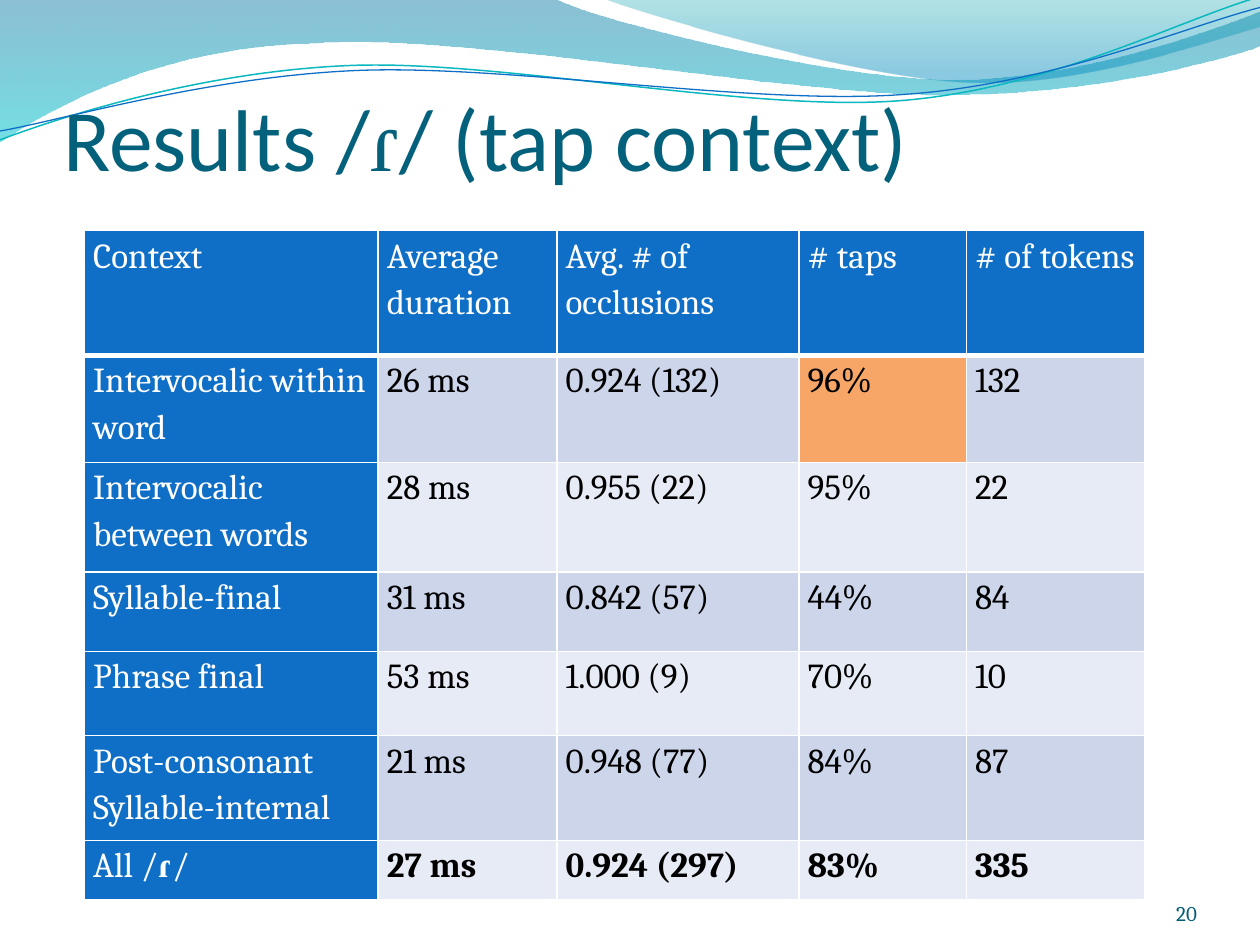
import math
from dataclasses import dataclass

from lxml import etree
from pptx import Presentation, util as u
from pptx.dml.color import RGBColor
from pptx.enum import text
from pptx.oxml.ns import qn

COLORS = {
    "title": "04617B", "number": "045D75", "blue": "0F6FC6", "teal": "0AB8BF",
    "band_dark": "CCD5EA", "band_light": "E7EBF5", "highlight": "F8A668",
    "white": "FFFFFF", "black": "000000",
}
LINE_TILT = -2.7


@dataclass
class Stop:
    position: float
    color: str
    alpha: int


@dataclass
class Wave:
    """Segments from start in inches: (x, y) is straight, six numbers are a Bezier curve."""
    start: tuple
    segments: list
    stops: tuple = ()
    line: str = ""
    width: float = 0
    center: tuple = (0, 0)


@dataclass
class Style:
    size: float
    color: str
    font: str = "Cambria"
    bold: bool = False


WAVES = [
    Wave((0, 0),
         [(4.4, -0.01),
          (4.76, 0.17, 6.64, 0.63, 7.58, 0.63), (8.53, 0.63, 9.58, 0.26, 10, 0.09),
          (10.01, 0.36),
          (9.83, 0.44, 8.7, 0.76, 7.46, 0.75), (6.22, 0.75, 3.82, 0.28, 2.57, 0.34),
          (1.29, 0.36, 0.46, 0.83, -0.01, 1.13), (0, 0)],
         stops=(Stop(0, "0074A1", 45), Stop(1, "00C6CF", 55))),
    Wave((4.79, -0.01),
         [(5.09, 0.11, 6.82, 0.62, 7.69, 0.65), (8.56, 0.69, 9.61, 0.32, 10, 0.21),
          (10, 0), (4.79, -0.01)],
         stops=(Stop(0, "00A1A9", 30), Stop(0.8, "008BBF", 45))),
    Wave((0, 1.11),
         [(0.48, 0.93, 1.58, 0.57, 2.77, 0.52), (3.95, 0.47, 5.93, 0.89, 7.13, 0.8),
          (8.33, 0.71, 9.38, 0.15, 9.98, -0.02)],
         line="teal", width=0.85, center=(4.99, 0.57)),
    Wave((0, 1.04),
         [(0.47, 0.96, 1.64, 0.61, 2.83, 0.56), (4.03, 0.51, 5.97, 0.84, 7.17, 0.75),
          (8.36, 0.67, 9.41, 0.21, 10, 0.06)],
         line="blue", width=0.75, center=(5, 0.59)),
]

COLUMN_WIDTHS = [2.33, 1.42, 1.92, 1.33, 1.42]
ROW_HEIGHTS = [0.99, 0.85, 0.87, 0.63, 0.67, 0.83, 0.47]
ROWS = [
    ["Context", "Average duration", "Avg. # of occlusions", "# taps", "# of tokens"],
    ["Intervocalic within word", "26 ms", "0.924 (132)", "96%", "132"],
    ["Intervocalic between words", "28 ms", "0.955 (22)", "95%", "22"],
    ["Syllable-final", "31 ms", "0.842 (57)", "44%", "84"],
    ["Phrase final", "53 ms", "1.000 (9)", "70%", "10"],
    ["Post-consonant\nSyllable-internal", "21 ms", "0.948 (77)", "84%", "87"],
    ["All /ɾ/", "27 ms", "0.924 (297)", "83%", "335"],
]
HIGHLIGHTED = (1, 3)


def rgb(name: str) -> RGBColor:
    return RGBColor.from_string(COLORS[name])


def level(point: tuple, center: tuple) -> tuple:
    """Turn a point about the center so that the tilt is taken out."""
    angle = math.radians(-LINE_TILT)
    dx, dy = point[0] - center[0], point[1] - center[1]
    return (center[0] + dx * math.cos(angle) - dy * math.sin(angle),
            center[1] + dx * math.sin(angle) + dy * math.cos(angle))


def bend(shape, segments: list) -> None:
    """Join the three straight steps of each Bezier segment into one curve."""
    steps = list(shape._element.spPr.iter(qn("a:lnTo")))
    for segment in segments:
        count = len(segment) // 2
        group, steps = steps[:count], steps[count:]
        if count == 3:
            curve = etree.Element(qn("a:cubicBezTo"))
            group[0].addprevious(curve)
            for step in group:
                curve.append(step[0])
                step.getparent().remove(step)


def draw_wave(page, wave: Wave) -> None:
    points = [wave.start]
    for segment in wave.segments:
        points += zip(segment[::2], segment[1::2])
    if wave.line:
        points = [level(point, wave.center) for point in points]
    first, *rest = [(u.Inches(x), u.Inches(y)) for x, y in points]
    builder = page.shapes.build_freeform(*first)
    builder.add_line_segments(rest, close=bool(wave.stops))
    shape = builder.convert_to_shape()
    bend(shape, wave.segments)
    shape.shadow.inherit = False
    if wave.line:
        shape.rotation = LINE_TILT
        shape.fill.background()
        shape.line.color.rgb = rgb(wave.line)
        shape.line.width = u.Pt(wave.width)
        return
    shape.line.fill.background()
    shape.fill.gradient()
    shape.fill.gradient_angle = 270
    for stop, wanted in zip(shape.fill.gradient_stops, wave.stops):
        stop.position = wanted.position
        stop.color.rgb = RGBColor.from_string(wanted.color)
    for node, wanted in zip(shape._element.spPr.iter(qn("a:srgbClr")), wave.stops):
        etree.SubElement(node, qn("a:alpha"), val=str(wanted.alpha * 1000))


def write(paragraph, words: str, style: Style) -> None:
    """Write words, setting the tap symbol in its own typeface."""
    for part in filter(None, words.partition("ɾ")):
        span = paragraph.add_run()
        span.text = part
        font = span.font
        font.name = "Times New Roman" if part == "ɾ" else style.font
        font.size = u.Pt(style.size)
        font.bold = style.bold or (part == "ɾ" and style.font == "Cambria")
        font.color.rgb = rgb(style.color)


def set_frame(frame, alignment, top: float = 0) -> None:
    frame.word_wrap = True
    frame.margin_top = u.Inches(top)
    frame.margin_left = frame.margin_right = frame.margin_bottom = 0
    frame.vertical_anchor = text.MSO_ANCHOR.BOTTOM
    frame.paragraphs[0].alignment = alignment


def set_borders(cell, top: float, bottom: float) -> None:
    properties = cell._tc.get_or_add_tcPr()
    for side, points in (("L", 1), ("R", 1), ("T", top), ("B", bottom)):
        line = etree.SubElement(properties, qn(f"a:ln{side}"), w=str(u.Pt(points)))
        fill = etree.SubElement(line, qn("a:solidFill"))
        etree.SubElement(fill, qn("a:srgbClr"), val=COLORS["white"])


def cell_fill(row: int, column: int) -> str:
    if row == 0 or column == 0:
        return "blue"
    if (row, column) == HIGHLIGHTED:
        return "highlight"
    return "band_dark" if row % 2 else "band_light"


def fill_cell(cell, row: int, column: int) -> None:
    heading = row == 0 or column == 0
    style = Style(20, "white" if heading else "black",
                  bold=row == len(ROWS) - 1 and not heading)
    set_borders(cell, 3 if row == 1 else 1, 3 if row == 0 else 1)
    cell.fill.solid()
    cell.fill.fore_color.rgb = rgb(cell_fill(row, column))
    cell.margin_left = cell.margin_right = u.Inches(0.07)
    cell.margin_top = cell.margin_bottom = 0
    frame = cell.text_frame
    for index, words in enumerate(ROWS[row][column].split("\n")):
        paragraph = frame.add_paragraph() if index else frame.paragraphs[0]
        paragraph.line_spacing = 1.15
        write(paragraph, words, style)


def draw_table(page) -> None:
    table = page.shapes.add_table(
        len(ROWS), len(COLUMN_WIDTHS), u.Inches(0.67), u.Inches(1.83),
        u.Inches(sum(COLUMN_WIDTHS)), u.Inches(sum(ROW_HEIGHTS))).table
    table.first_row = table.horz_banding = False
    for column, width in zip(table.columns, COLUMN_WIDTHS):
        column.width = u.Inches(width)
    for row, height in zip(table.rows, ROW_HEIGHTS):
        row.height = u.Inches(height)
    for row in range(len(ROWS)):
        for column in range(len(COLUMN_WIDTHS)):
            fill_cell(table.cell(row, column), row, column)


def draw_title(page) -> None:
    title = page.shapes.title
    title.left, title.top = u.Inches(0.5), u.Inches(0.25)
    title.width, title.height = u.Inches(9), u.Inches(1.25)
    page.shapes._spTree.append(title._element)
    set_frame(title.text_frame, text.PP_ALIGN.LEFT, top=0.05)
    write(title.text_frame.paragraphs[0], "Results /ɾ/ (tap context)",
          Style(50, "title", "Calibri"))


def draw_page_number(page) -> None:
    box = page.shapes.add_textbox(u.Inches(8.67), u.Inches(6.95), u.Inches(0.83), u.Inches(0.4))
    set_frame(box.text_frame, text.PP_ALIGN.RIGHT)
    write(box.text_frame.paragraphs[0], "20", Style(12, "number"))


def main() -> None:
    deck = Presentation()
    deck.slide_width, deck.slide_height = u.Inches(10), u.Inches(7.5)
    page = deck.slides.add_slide(deck.slide_layouts[5])
    for wave in WAVES:
        draw_wave(page, wave)
    draw_title(page)
    draw_table(page)
    draw_page_number(page)
    deck.save("out.pptx")


if __name__ == "__main__":
    main()
